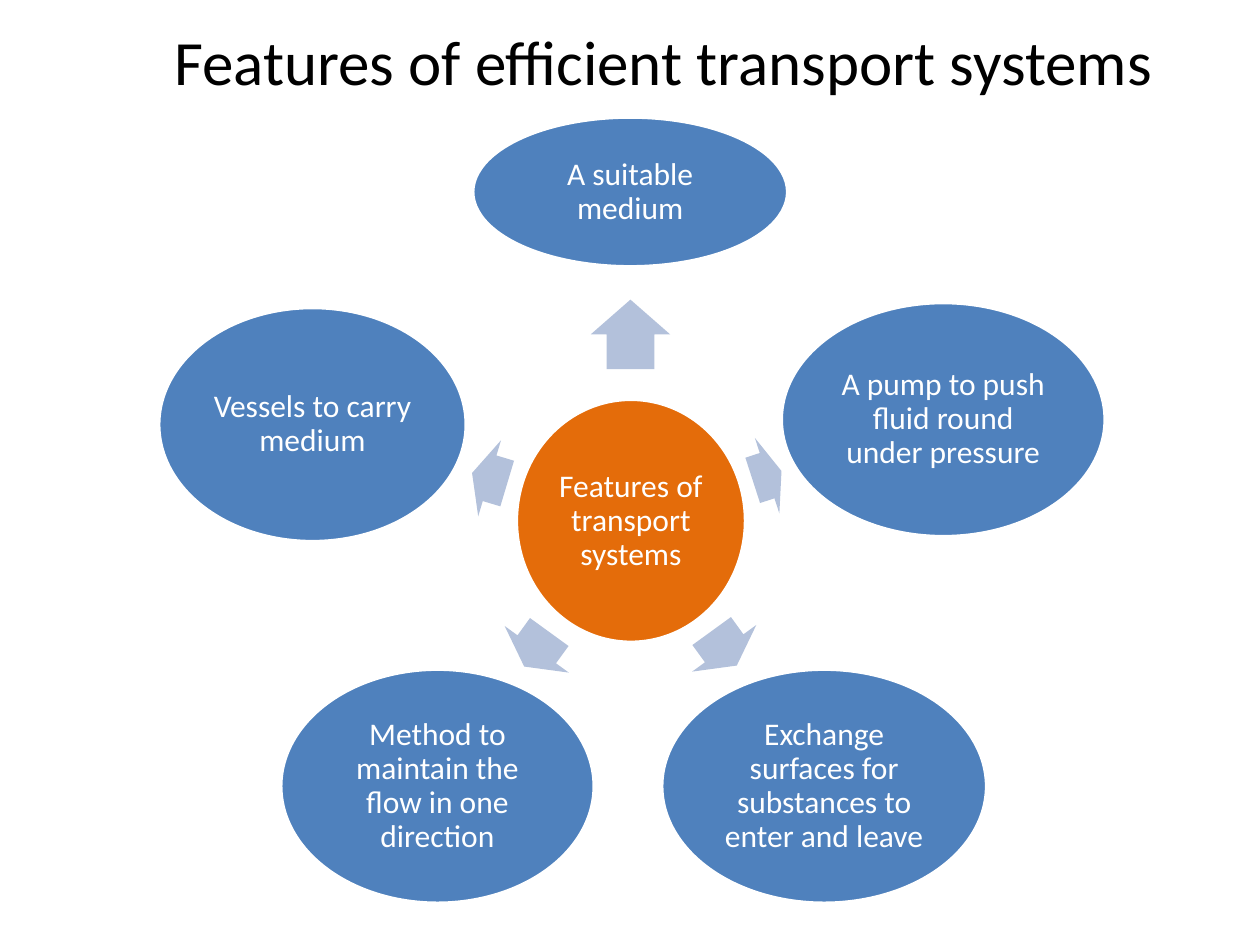
from pptx import Presentation
from pptx import util as u
from pptx.dml import color
from pptx.enum import shapes, text

WHITE, BLUE, ORANGE, PALE = "FFFFFF", "4F81BD", "E46C0A", "B3C1DB"


def rgb(code):
    return color.RGBColor.from_string(code)


class Page:
    """Holds the style and the current slide, and draws its elements."""

    font = "Calibri"

    def __init__(self, slide):
        self.slide = slide

    def label(self, shape, words, size, ink, pad):
        frame = shape.text_frame
        frame.word_wrap = True
        frame.vertical_anchor = text.MSO_ANCHOR.MIDDLE
        frame.margin_left = frame.margin_right = u.Cm(pad)
        frame.margin_top = frame.margin_bottom = u.Cm(pad)
        frame.text = words
        para = frame.paragraphs[0]
        para.alignment = text.PP_ALIGN.CENTER
        for run in para.runs:
            run.font.name = self.font
            run.font.size = u.Pt(size)
            run.font.color.rgb = rgb(ink)
        return para

    def title(self, words, box, indent):
        shape = self.slide.shapes.add_textbox(*map(u.Cm, box))
        para = self.label(shape, words, 36, "000000", 0.13)
        props = para._p.get_or_add_pPr()
        props.set("marL", str(u.Cm(indent)))
        props.set("indent", "0")

    def shape(self, kind, box, fill):
        shape = self.slide.shapes.add_shape(kind, *map(u.Cm, box))
        shape.shadow.inherit = False
        shape.fill.solid()
        shape.fill.fore_color.rgb = rgb(fill)
        return shape

    def oval(self, words, box, fill):
        shape = self.shape(shapes.MSO_SHAPE.OVAL, box, fill)
        shape.line.color.rgb = rgb(WHITE)
        shape.line.width = u.Pt(2)
        para = self.label(shape, words, 18, WHITE, 0.08)
        para.line_spacing = 0.9

    def arrow(self, box, angle):
        shape = self.shape(shapes.MSO_SHAPE.RIGHT_ARROW, box, PALE)
        shape.line.fill.background()
        shape.adjustments[0] = 0.6
        shape.adjustments[1] = 0.5
        shape.rotation = angle


FEATURES = [
    ("A suitable medium", (9.53, 2.36, 6.35, 3.02),
     (12.01, 5.94, 1.4, 1.6), 270),
    ("A pump to push fluid round under pressure", (15.75, 6.1, 6.53, 4.72),
     (15.16, 8.79, 0.61, 1.6), 342),
    ("Exchange surfaces for substances to enter and leave",
     (13.34, 13.49, 6.55, 4.72), (14.17, 12.27, 0.86, 1.6), 54),
    ("Method to maintain the flow in one direction",
     (5.66, 13.49, 6.32, 4.72), (10.39, 12.29, 0.86, 1.6), 126),
    ("Vessels to carry medium", (3.2, 6.2, 6.2, 4.72),
     (9.5, 8.84, 0.74, 1.6), 196.7),
]


def main():
    deck = Presentation()
    deck.slide_width, deck.slide_height = u.Cm(25.4), u.Cm(19.05)
    page = Page(deck.slides.add_slide(deck.slide_layouts[6]))
    page.title("Features of efficient transport systems",
               (0, 0.33, 25.4, 1.78), 1.35)
    page.oval("Features of transport systems", (10.41, 8.05, 4.62, 4.9), ORANGE)
    for words, oval, arrow, angle in FEATURES:
        page.arrow(arrow, angle)
        page.oval(words, oval, BLUE)
    deck.save("out.pptx")


if __name__ == "__main__":
    main()
